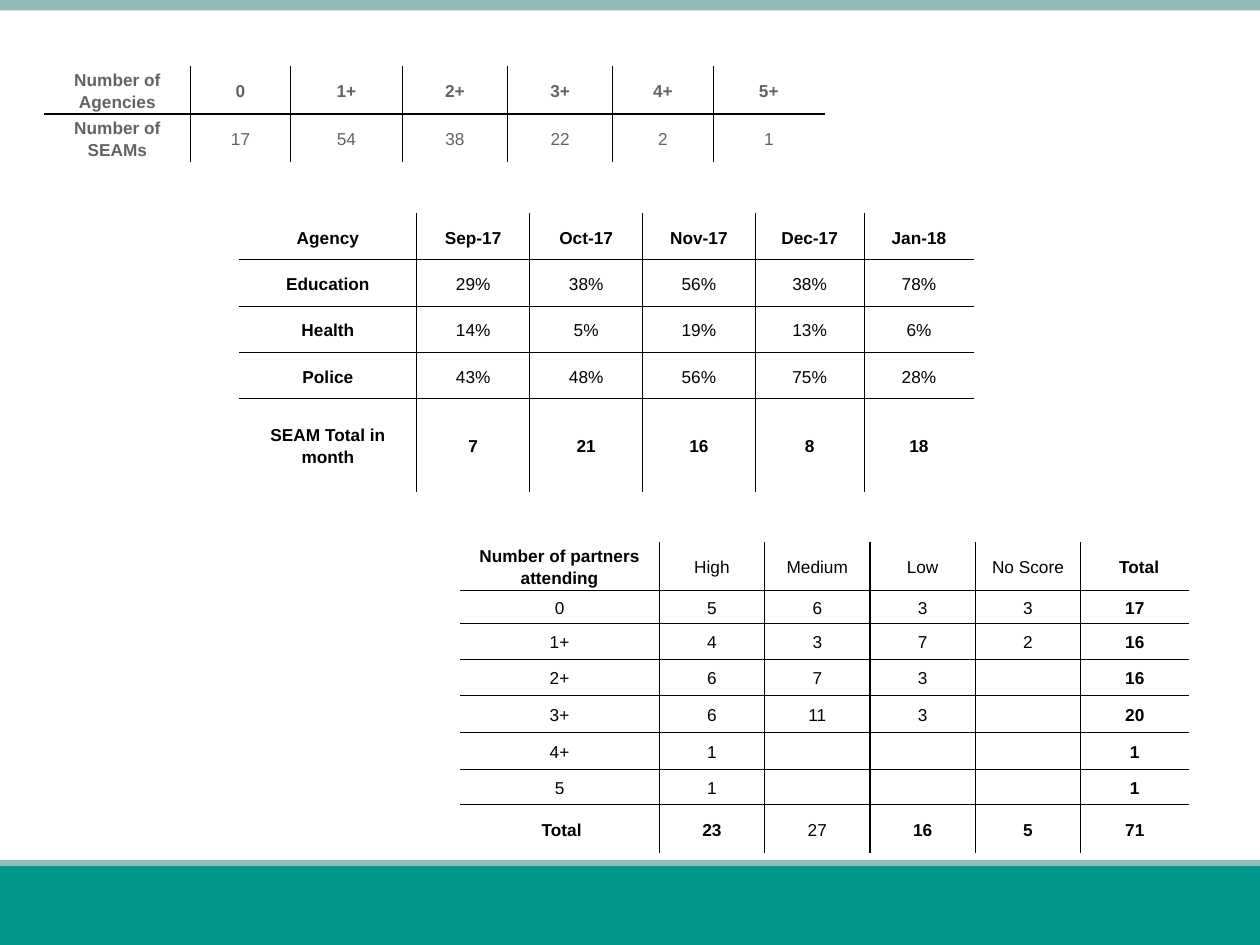
from lxml.etree import SubElement
from pptx import Presentation
from pptx.dml.color import RGBColor
from pptx.enum.shapes import MSO_SHAPE
from pptx.enum.text import MSO_ANCHOR, PP_ALIGN
from pptx.oxml.ns import qn
from pptx.util import Cm, Pt


def color(hex_code):
    return RGBColor.from_string(hex_code)


def write(frame, text, size=14, font="Arial", ink="000000", bold=False, after=0):
    paragraph = frame.paragraphs[0]
    paragraph.alignment = PP_ALIGN.CENTER
    paragraph.line_spacing = 1.15
    paragraph.space_after = Pt(after)
    paragraph.font.size = Pt(size)
    if text:
        run = paragraph.add_run()
        run.text = text
        run.font.size = Pt(size)
        run.font.name = font
        run.font.bold = bold
        run.font.color.rgb = color(ink)


def add_border(cell, side, visible, ink="000000"):
    line = SubElement(cell._tc.get_or_add_tcPr(), qn(f"a:ln{side}"), w=str(Pt(1)))
    if visible:
        fill = SubElement(line, qn("a:solidFill"))
        SubElement(fill, qn("a:srgbClr"), val=ink)
    else:
        SubElement(line, qn("a:noFill"))


class Builder:
    """Holds the slide and the look shared by its elements."""
    side_margin = Cm(0.28)

    def __init__(self, slide):
        self.slide = slide

    def band(self, top, height, fill):
        bar = self.slide.shapes.add_shape(
            MSO_SHAPE.RECTANGLE, 0, Cm(top), Cm(36.12), Cm(height))
        bar.shadow.inherit = False
        bar.fill.solid()
        bar.fill.fore_color.rgb = color(fill)
        bar.line.fill.background()

    def table(self, left, top, widths, heights, rows, is_bold, **text_format):
        """Table ruled between its cells, with no outer frame."""
        table = self.slide.shapes.add_table(
            len(heights), len(widths), Cm(left), Cm(top),
            Cm(sum(widths)), Cm(sum(heights))).table
        table.first_row = table.horz_banding = False
        for column, width in zip(table.columns, widths):
            column.width = Cm(width)
        for row, height in zip(table.rows, heights):
            row.height = Cm(height)
        last_r, last_c = len(heights) - 1, len(widths) - 1
        for r, texts in enumerate(rows):
            for c, text in enumerate(texts):
                cell = table.cell(r, c)
                cell.margin_left = cell.margin_right = self.side_margin
                cell.margin_top = cell.margin_bottom = 0
                cell.vertical_anchor = MSO_ANCHOR.MIDDLE
                inner = {"L": c > 0, "R": c < last_c, "T": r > 0, "B": r < last_r}
                for side, visible in inner.items():
                    add_border(cell, side, visible)
                cell.fill.background()
                write(cell.text_frame, text, bold=is_bold(r, c), **text_format)
        return table


def main():
    deck = Presentation()
    deck.slide_width, deck.slide_height = Cm(36.12), Cm(27.1)
    builder = Builder(deck.slides.add_slide(deck.slide_layouts[6]))

    # Top and bottom bands
    builder.band(0, 0.3, "90BBBA")
    builder.band(24.66, 2.44, "90BBBA")
    builder.band(24.84, 2.26, "00988D")

    # SEAMs by number of agencies
    builder.table(
        1.27, 1.88, [4.19, 2.87, 3.2, 3.02, 3.02, 2.87, 3.2], [1.39] * 2,
        [["Number of Agencies", "0", "1+", "2+", "3+", "4+", "5+"],
         ["Number of SEAMs", "17", "54", "38", "22", "2", "1"]],
        lambda r, c: r == 0 or c == 0, ink="636363")

    # Attendance by agency and month
    builder.table(
        6.86, 6.12, [5.08, 3.25, 3.23, 3.23, 3.12, 3.15], [1.33] * 4 + [2.66],
        [["Agency", "Sep-17", "Oct-17", "Nov-17", "Dec-17", "Jan-18"],
         ["Education", "29%", "38%", "56%", "38%", "78%"],
         ["Health", "14%", "5%", "19%", "13%", "6%"],
         ["Police", "43%", "48%", "56%", "75%", "28%"],
         ["SEAM Total in month", "7", "21", "16", "8", "18"]],
        lambda r, c: r in (0, 4) or c == 0, after=10)

    # Scores by number of partners attending
    scores = builder.table(
        13.18, 15.54, [5.72] + [3.02] * 4 + [3.1],
        [1.39, 0.94, 1.04, 1.04, 1.07, 1.04, 1.02, 1.39],
        [["Number of partners attending", "High", "Medium", "Low", "No Score", "Total"],
         ["0", "5", "6", "3", "3", "17"],
         ["1+", "4", "3", "7", "2", "16"],
         ["2+", "6", "7", "3", "", "16"],
         ["3+", "6", "11", "3", "", "20"],
         ["4+", "1", "", "", "", "1"],
         ["5", "1", "", "", "", "1"],
         ["Total", "23", "27", "16", "5", "71"]],
        lambda r, c: c == 5 or (r, c) == (0, 0) or (r == 7 and c != 2))
    scores.cell(0, 5).margin_left = Cm(0.53)
    scores.cell(7, 0).margin_left = Cm(0.4)
    for total in scores.rows[7].cells:
        total.fill.solid()
        total.fill.fore_color.rgb = color("FFFFFF")

    deck.save("out.pptx")


if __name__ == "__main__":
    main()
